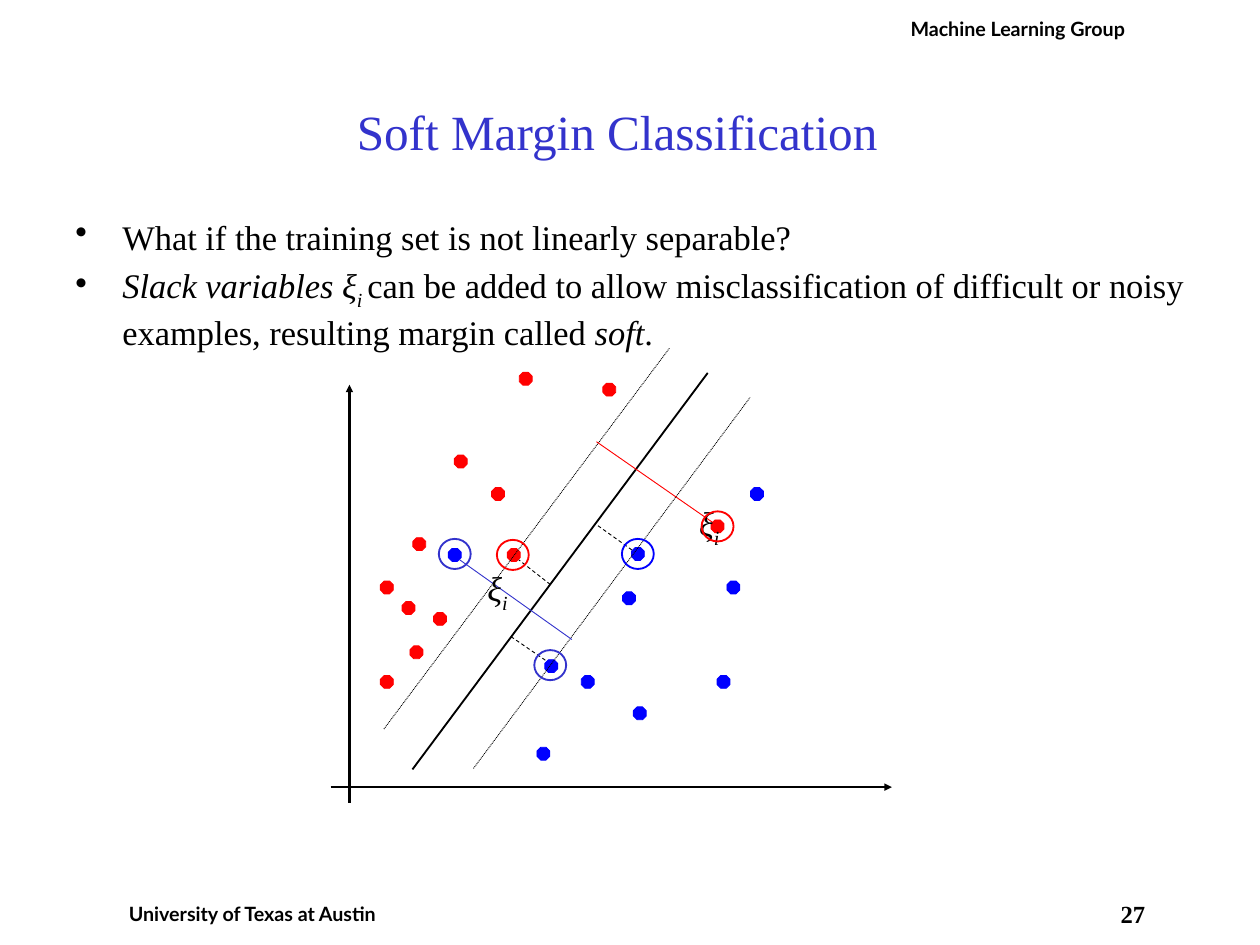
from lxml.etree import SubElement
from pptx import Presentation
from pptx.dml.color import RGBColor
from pptx.enum.dml import MSO_LINE as Dash
from pptx.enum.shapes import MSO_CONNECTOR as Link, MSO_SHAPE as Shape
from pptx.enum.text import MSO_ANCHOR as Anchor, PP_ALIGN as Align
from pptx.oxml.ns import qn
from pptx.util import Inches, Pt

COLORS = {"black": "000000", "red": "FF0000", "blue": "0000FF", "indigo": "3333CC"}
SERIF, SANS = "Times New Roman", "Lato"
COLS = 128

# Centres of the training examples, in grid columns and rows
DOTS = {
    "red": [(53.4, 38.5), (61.9, 39.6), (46.8, 46.9), (50.6, 50.2),
            (72.9, 53.5), (42.6, 55.3), (52.2, 56.4), (39.3, 59.7),
            (41.5, 61.8), (44.7, 62.9), (42.3, 66.3), (39.3, 69.3)],
    "blue": [(76.9, 50.2), (64.8, 56.3), (46.2, 56.4), (74.5, 59.7),
             (63.9, 60.8), (56, 67.7), (59.7, 69.3), (73.5, 69.3),
             (65, 72.5), (55.2, 76.6)],
}
RINGS = [(52.1, 56.4, "red"), (55.9, 67.6, "indigo"), (64.8, 56.3, "blue"),
         (72.9, 53.5, "red"), (46.2, 56.3, "indigo")]
AXES = [(35.5, 81.6, 35.5, 39.1), (33.6, 80, 90.6, 80)]
MARGINS = [(48.1, 78.1, 76.2, 40.4), (39, 74.1, 68, 35.4)]
GAPS = [(64.2, 55.9, 60.7, 53.4), (55.4, 67.1, 51.9, 64.7),
        (55.9, 59.4, 52.7, 56.9)]
SLACKS = [(72.4, 53.1, 60.6, 44.9, "red"), (46.7, 56.9, 58.1, 65, "indigo")]

# Each run is its text and its marks: i for italic, s for subscript
POINTS = [
    [("What if the training set is not linearly separable?", "")],
    [("Slack variables ξ", "i"), ("i ", "is"),
     ("can be added to allow misclassification of difficult or noisy "
      "examples, resulting margin called ", ""), ("soft", "i"), (".", "")],
]
SLACK = [[("ξ", "i"), ("i", "is")]]


class Canvas:
    """Draws on one slide, with lengths in columns and rows of a square grid."""

    def __init__(self, deck):
        self.slide = deck.slides.add_slide(deck.slide_layouts[5])
        self.shapes = self.slide.shapes
        self.cell = deck.slide_width / COLS

    def grid(self, *cells):
        return [round(n * self.cell) for n in cells]

    def color(self, name):
        return RGBColor.from_string(COLORS[name])

    def style(self, run, size, font=SERIF, color="black", bold=False, marks=""):
        face = run.font
        face.name, face.size, face.bold = font, Pt(size), bold
        face.italic = "i" in marks
        face.color.rgb = self.color(color)
        if "s" in marks:
            run._r.get_or_add_rPr().set("baseline", "-25000")

    def inset(self, frame, side, top):
        frame.margin_left = frame.margin_right = Inches(side)
        frame.margin_top = frame.margin_bottom = Inches(top)
        frame.word_wrap = True

    def title(self, text, *box):
        head = self.shapes.title
        head.left, head.top, head.width, head.height = self.grid(*box)
        frame = head.text_frame
        frame.text = text
        frame.vertical_anchor = Anchor.MIDDLE
        self.inset(frame, 0.14, 0.07)
        line = frame.paragraphs[0]
        line.alignment = Align.CENTER
        self.style(line.runs[0], 40, color="indigo")

    def note(self, text, size, font, pad, *box):
        """Add one bold centred line for the slide's edge."""
        frame = self.shapes.add_textbox(*self.grid(*box)).text_frame
        frame.text = text
        self.inset(frame, pad, pad)
        line = frame.paragraphs[0]
        line.alignment = Align.CENTER
        self.style(line.runs[0], size, font, bold=True)

    def text(self, lines, *box, list=False):
        frame = self.shapes.add_textbox(*self.grid(*box)).text_frame
        self.inset(frame, 0.14, 0.07)
        for k, parts in enumerate(lines):
            line = frame.add_paragraph() if k else frame.paragraphs[0]
            for words, marks in parts:
                run = line.add_run()
                run.text = words
                self.style(run, 28, marks=marks)
            if list:
                line.space_before = Pt(5.6)
                self.bullet(line)
            else:
                line.alignment = Align.CENTER

    def bullet(self, line):
        props = line._p.get_or_add_pPr()
        hang = Inches(0.53)
        props.set("marL", str(hang))
        props.set("indent", str(-hang))
        SubElement(props, qn("a:buChar")).set("char", "•")

    def mark(self, kind, x, y, wide, high, color, weight, solid):
        """Add a shape centred on x, y."""
        box = self.grid(x - wide / 2, y - high / 2, wide, high)
        shape = self.shapes.add_shape(kind, *box)
        shape.shadow.inherit = False
        shape.line.color.rgb = self.color(color)
        shape.line.width = Pt(weight)
        if solid:
            shape.fill.solid()
            shape.fill.fore_color.rgb = self.color(color)
        else:
            shape.fill.background()

    def dot(self, x, y, color):
        self.mark(Shape.OCTAGON, x, y, 1.3, 1.3, color, 0.75, True)

    def ring(self, x, y, color):
        self.mark(Shape.OVAL, x, y, 3.24, 3.06, color, 1.5, False)

    def line(self, *ends, color="black", weight=0.75, dash=None, arrow=False):
        link = self.shapes.add_connector(Link.STRAIGHT, *self.grid(*ends))
        pen = link.line
        pen.color.rgb = self.color(color)
        pen.width = Pt(weight)
        if dash:
            pen.dash_style = dash
        if arrow:
            tip = SubElement(pen._get_or_add_ln(), qn("a:tailEnd"))
            tip.set("type", "triangle")
        SubElement(link._element.spPr, qn("a:effectLst"))


def main():
    deck = Presentation()
    deck.slide_width, deck.slide_height = Inches(14.22), Inches(10.67)
    page = Canvas(deck)

    page.note("27", 20, SERIF, 0, 113, 91.4, 4.2, 4.7)
    page.note("University of Texas at Austin", 16, SANS, 0.07, 10.7, 91, 29.9, 6.1)
    page.note("Machine Learning Group", 16, SANS, 0.07, 90.6, 1.1, 25.6, 6.1)
    page.title("Soft Margin Classification", 8.3, 5.3, 108.8, 16)
    page.text(POINTS, 6.4, 21.3, 115.2, 70.4, list=True)

    for ends in AXES:
        page.line(*ends, weight=2, arrow=True)
    for color, spots in DOTS.items():
        for x, y in spots:
            page.dot(x, y, color)
    page.line(41.9, 78.2, 71.9, 37.9, weight=1.5)
    for ends in GAPS:
        page.line(*ends, dash=Dash.DASH)
    for ends in MARGINS:
        page.line(*ends, dash=Dash.ROUND_DOT)
    for *ends, color in SLACKS:
        page.line(*ends, color=color)
    for x, y in [(67.1, 50.4), (45.6, 57)]:
        page.text(SLACK, x, y, 9.9, 5.6)
    for spot in RINGS:
        page.ring(*spot)

    deck.save("out.pptx")


if __name__ == "__main__":
    main()
